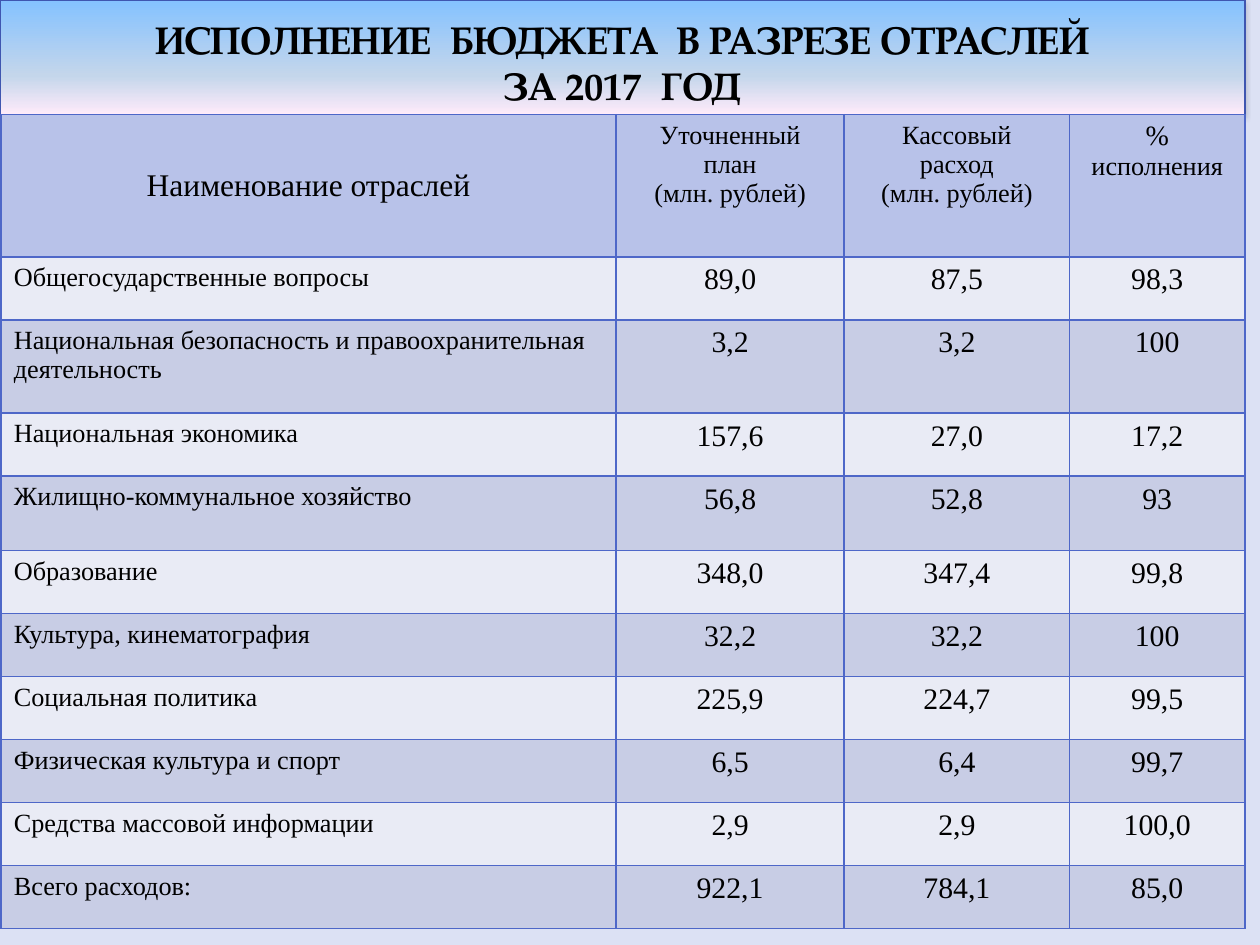
from itertools import product
from lxml import etree
from pptx import Presentation
from pptx.dml.color import RGBColor
from pptx.enum.text import MSO_ANCHOR, MSO_AUTO_SIZE, PP_ALIGN
from pptx.oxml import parse_xml
from pptx.util import Inches, Pt

LEFT, MID = PP_ALIGN.LEFT, PP_ALIGN.CENTER
TOP, CENTER, BOTTOM = MSO_ANCHOR.TOP, MSO_ANCHOR.MIDDLE, MSO_ANCHOR.BOTTOM
NS = "http://schemas.openxmlformats.org/drawingml/2006/main"
COLORS = {"back": "DCE1F4", "text": "000000", "frame": "3F56B0", "rule": "4E67C8",
          "head": "B8C2E9", "light": "E9EBF5", "dark": "C8CDE5"}
STOPS = [(0, "5E9EFF"), (1, "85C2FF"), (66, "C4D6EB"), (100, "FFEBFA")]
TITLE = "ИСПОЛНЕНИЕ  БЮДЖЕТА  В РАЗРЕЗЕ ОТРАСЛЕЙ\nЗА 2017  ГОД"
HEADS = ["Наименование отраслей", "Уточненный\nплан\n(млн. рублей)",
         "Кассовый\nрасход\n(млн. рублей)", "%\nисполнения"]
ROWS = [
    ("Общегосударственные вопросы", "89,0", "87,5", "98,3"),
    ("Национальная безопасность и правоохранительная деятельность", "3,2", "3,2", "100"),
    ("Национальная экономика", "157,6", "27,0", "17,2"),
    ("Жилищно-коммунальное хозяйство", "56,8", "52,8", "93"),
    ("Образование", "348,0", "347,4", "99,8"),
    ("Культура, кинематография", "32,2", "32,2", "100"),
    ("Социальная политика", "225,9", "224,7", "99,5"),
    ("Физическая культура и спорт", "6,5", "6,4", "99,7"),
    ("Средства массовой информации", "2,9", "2,9", "100,0"),
    ("Всего расходов:", "922,1", "784,1", "85,0"),
]
WIDTHS = [48.8, 18.1, 17.9, 13.9]
HEIGHTS = [11.3, 5, 7.4, 5, 5.9] + [5] * 6


def rgb(name):
    """Return the named colour."""
    return RGBColor.from_string(COLORS[name])


def write(frame, text, sizes=(15,), font="Times New Roman", bold=False, align=MID):
    """Fill a text frame with one paragraph per line; the last size repeats."""
    frame.text = text
    for i, para in enumerate(frame.paragraphs):
        para.alignment = align
        para.space_before = Pt(0)
        for run in para.runs:
            run.font.size = Pt(sizes[min(i, len(sizes) - 1)])
            run.font.name = font
            run.font.bold = bold
            run.font.color.rgb = rgb("text")


class Sheet:
    """Holds the slide and its grid of 100 columns by 75 rows."""

    def __init__(self, deck):
        """Add a slide with a plain background."""
        self.unit = deck.slide_width / 100
        self.slide = deck.slides.add_slide(deck.slide_layouts[5])
        fill = self.slide.background.fill
        fill.solid()
        fill.fore_color.rgb = rgb("back")

    def span(self, *cells):
        """Turn grid counts into lengths."""
        return [round(n * self.unit) for n in cells]

    def title(self, text, *box):
        """Place the title on a shaded band."""
        band = self.slide.shapes.title
        band.left, band.top, band.width, band.height = self.span(*box)
        band.fill.gradient()
        band.fill.gradient_angle = 270
        band.line.color.rgb = rgb("frame")
        band.line.width = Pt(1)
        props = band._element.spPr
        stops = props.find(f".//{{{NS}}}gsLst")
        stops.clear()
        for pos, tone in STOPS:
            stop = etree.SubElement(stops, f"{{{NS}}}gs", pos=str(pos * 1000))
            etree.SubElement(stop, f"{{{NS}}}srgbClr", val=tone)
        props.append(parse_xml(
            f'<a:effectLst xmlns:a="{NS}"><a:outerShdw blurRad="{Pt(3)}" dist="{Pt(1)}" '
            'dir="5400000" rotWithShape="0"><a:srgbClr val="000000"><a:alpha val="15000"/>'
            '</a:srgbClr></a:outerShdw></a:effectLst>'))
        frame = band.text_frame
        frame.auto_size = MSO_AUTO_SIZE.NONE
        frame.word_wrap = True
        frame.vertical_anchor = BOTTOM
        write(frame, text, (22,), "TeX Gyre Pagella", True)

    def table(self, data, left, top, widths, heights):
        """Add a ruled table with a head row and striped body."""
        box = self.span(left, top, sum(widths), sum(heights))
        grid = self.slide.shapes.add_table(len(data), len(widths), *box).table
        grid.first_row = grid.horz_banding = False
        for col, size in zip(grid.columns, self.span(*widths)):
            col.width = size
        for row, size in zip(grid.rows, self.span(*heights)):
            row.height = size
        for r, c in product(range(len(data)), range(len(widths))):
            tone = "head" if r == 0 else "light" if r % 2 else "dark"
            if r == 0:
                sizes = {0: (18,), 3: (16, 15)}.get(c, (15,))
            else:
                sizes = (17,) if c else (15,)
            cell = grid.cell(r, c)
            cell.vertical_anchor = TOP if r or c else CENTER
            write(cell.text_frame, data[r][c], sizes, align=LEFT if r and not c else MID)
            self.rule(cell)
            cell.fill.solid()
            cell.fill.fore_color.rgb = rgb(tone)

    def rule(self, cell):
        """Draw all four borders of a cell."""
        props = cell._tc.get_or_add_tcPr()
        for side in "LRTB":
            props.append(parse_xml(
                f'<a:ln{side} xmlns:a="{NS}" w="{Pt(1)}"><a:solidFill>'
                f'<a:srgbClr val="{COLORS["rule"]}"/></a:solidFill></a:ln{side}>'))


def main():
    """Build and save the slide."""
    deck = Presentation()
    deck.slide_width, deck.slide_height = Inches(10), Inches(7.5)
    sheet = Sheet(deck)
    sheet.title(TITLE, 0, 0, 98.8, 9.1)
    sheet.table([HEADS, *ROWS], 0.1, 9.1, WIDTHS, HEIGHTS)
    deck.save("out.pptx")


if __name__ == "__main__":
    main()
